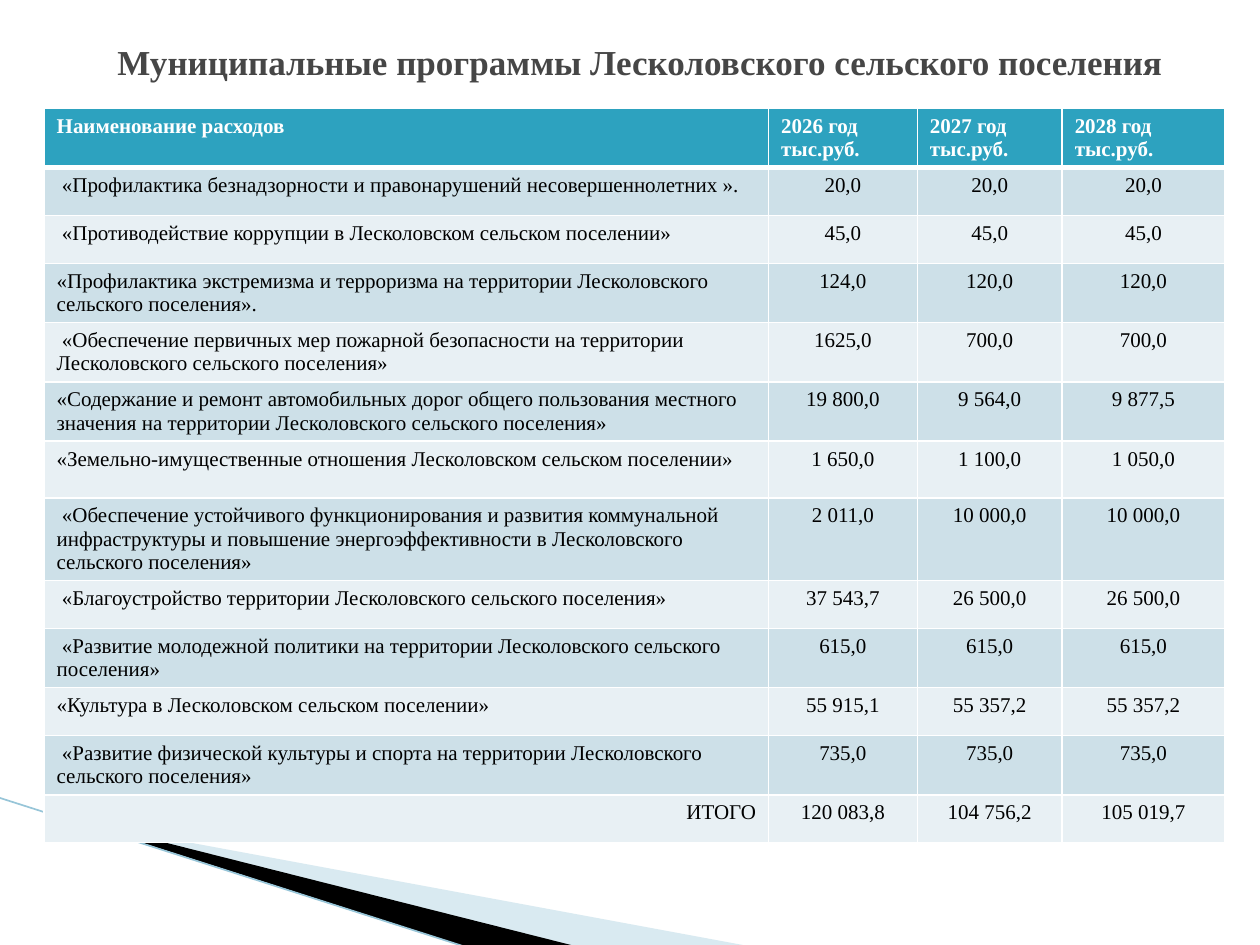
import pptx
import pptx.dml.color
import pptx.enum.shapes
import pptx.enum.text
import pptx.oxml
import pptx.oxml.ns
import pptx.util
from lxml import etree

Inches = pptx.util.Inches
ALIGN = pptx.enum.text.PP_ALIGN
FONT = "Times New Roman"
COLORS = {
    "white": "FFFFFF", "black": "000000", "title": "464646", "header": "2DA2BF",
    "odd": "CDE0E8", "even": "E8F0F4", "wedge": "A0CBDC", "edge": "97C5D8",
}
TITLE = "Муниципальные программы Лесколовского сельского поселения"
HEADER = ("Наименование расходов", "2026 год тыс.руб.", "2027 год тыс.руб.",
          "2028 год тыс.руб.")
# Programme, three yearly sums, row height
PROGRAMMES = [
    (" «Профилактика безнадзорности и правонарушений несовершеннолетних ».",
     "20,0", "20,0", "20,0", 0.38),
    (" «Противодействие коррупции в Лесколовском сельском поселении»",
     "45,0", "45,0", "45,0", 0.38),
    ("«Профилактика экстремизма и терроризма на территории Лесколовского "
     "сельского поселения».", "124,0", "120,0", "120,0", 0.45),
    (" «Обеспечение первичных мер пожарной безопасности на территории "
     "Лесколовского сельского поселения»", "1625,0", "700,0", "700,0", 0.45),
    ("«Содержание и ремонт автомобильных дорог общего пользования местного "
     "значения на территории Лесколовского сельского поселения»",
     "19 800,0", "9 564,0", "9 877,5", 0.45),
    ("«Земельно-имущественные отношения Лесколовском сельском поселении»",
     "1 650,0", "1 100,0", "1 050,0", 0.45),
    (" «Обеспечение устойчивого функционирования и развития коммунальной "
     "инфраструктуры и повышение энергоэффективности в Лесколовского "
     "сельского поселения»", "2 011,0", "10 000,0", "10 000,0", 0.62),
    (" «Благоустройство территории Лесколовского сельского поселения»",
     "37 543,7", "26 500,0", "26 500,0", 0.38),
    (" «Развитие молодежной политики на территории Лесколовского сельского "
     "поселения»", "615,0", "615,0", "615,0", 0.45),
    ("«Культура в Лесколовском сельском поселении»",
     "55 915,1", "55 357,2", "55 357,2", 0.38),
    (" «Развитие физической культуры и спорта на территории Лесколовского "
     "сельского поселения»", "735,0", "735,0", "735,0", 0.45),
    ("ИТОГО", "120 083,8", "104 756,2", "105 019,7", 0.38),
]
COLUMNS = (5.75, 1.18, 1.15, 1.29)


def rgb(name):
    return pptx.dml.color.RGBColor.from_string(COLORS[name])


def add_text(p, text, size, color, bold=False, align=ALIGN.LEFT):
    p.alignment = align
    r = p.add_run()
    r.text = text
    r.font.name = FONT
    r.font.size = pptx.util.Pt(size)
    r.font.bold = bold
    r.font.color.rgb = rgb(color)


def add_wedge(s, points, color, opacity=100):
    start, *rest = [(Inches(x), Inches(y)) for x, y in points]
    builder = s.shapes.build_freeform(*start)
    builder.add_line_segments(rest, close=True)
    sp = builder.convert_to_shape()
    sp.shadow.inherit = False
    sp.fill.solid()
    sp.fill.fore_color.rgb = rgb(color)
    sp.line.fill.background()
    if opacity < 100:
        clr = sp.fill._xPr.find(".//" + pptx.oxml.ns.qn("a:srgbClr"))
        etree.SubElement(clr, pptx.oxml.ns.qn("a:alpha"), val=str(opacity * 1000))


def add_edge(s, start, end):
    line = s.shapes.add_connector(pptx.enum.shapes.MSO_CONNECTOR.STRAIGHT,
                                  *map(Inches, start + end))
    line.line.color.rgb = rgb("edge")
    line.line.width = pptx.util.Pt(0.95)
    etree.SubElement(line._element.spPr, pptx.oxml.ns.qn("a:effectLst"))


def set_borders(cell, bottom):
    tc_pr = cell._tc.get_or_add_tcPr()
    widths = {"lnL": 1, "lnR": 1, "lnT": 1, "lnB": bottom}
    for place, (tag, width) in enumerate(widths.items()):
        tc_pr.insert(place, pptx.oxml.parse_xml(
            f'<a:{tag} {pptx.oxml.ns.nsdecls("a")} w="{pptx.util.Pt(width)}">'
            f'<a:solidFill><a:srgbClr val="{COLORS["white"]}"/></a:solidFill>'
            f'</a:{tag}>'))


def fill_row(table, i, texts, fill, aligns, header=False):
    for cell, text, align in zip(table.rows[i].cells, texts, aligns):
        cell.fill.solid()
        cell.fill.fore_color.rgb = rgb(fill)
        set_borders(cell, 3 if header else 1)
        add_text(cell.text_frame.paragraphs[0], text, 12,
                 "white" if header else "black", header, align)


def add_budget_table(s):
    heights = [0.38] + [row[-1] for row in PROGRAMMES]
    table = s.shapes.add_table(
        len(heights), len(COLUMNS), Inches(0.35), Inches(0.86),
        Inches(sum(COLUMNS)), Inches(sum(heights))).table
    for column, width in zip(table.columns, COLUMNS):
        column.width = Inches(width)
    for row, height in zip(table.rows, heights):
        row.height = Inches(height)
    fill_row(table, 0, HEADER, "header", [ALIGN.LEFT] * 4, header=True)
    for i, (*texts, _) in enumerate(PROGRAMMES, 1):
        first = ALIGN.RIGHT if i == len(PROGRAMMES) else ALIGN.LEFT
        fill_row(table, i, texts, "odd" if i % 2 else "even",
                 [first] + [ALIGN.CENTER] * 3)


def set_title(s):
    title = s.shapes.title
    title.left, title.top, title.width, title.height = map(
        Inches, (0.33, 0.21, 9.5, 0.55))
    tf = title.text_frame
    tf.word_wrap = True
    tf.vertical_anchor = pptx.enum.text.MSO_ANCHOR.MIDDLE
    add_text(tf.paragraphs[0], TITLE, 20, "title", True, ALIGN.CENTER)


def main():
    prs = pptx.Presentation()
    prs.slide_width, prs.slide_height = Inches(10), Inches(7.5)
    s = prs.slides.add_slide(prs.slide_layouts[5])
    # Corner decoration behind the table
    add_wedge(s, [(0.55, 6.51), (5.95, 7.51), (4.56, 7.51), (0.55, 6.5)], "wedge", 40)
    add_wedge(s, [(0.53, 6.49), (4.57, 7.51), (3.72, 7.52), (0.54, 6.5)], "black")
    add_edge(s, (-0.01, 6.33), (3.71, 7.52))
    # Content
    add_budget_table(s)
    set_title(s)
    prs.save("out.pptx")


if __name__ == "__main__":
    main()
